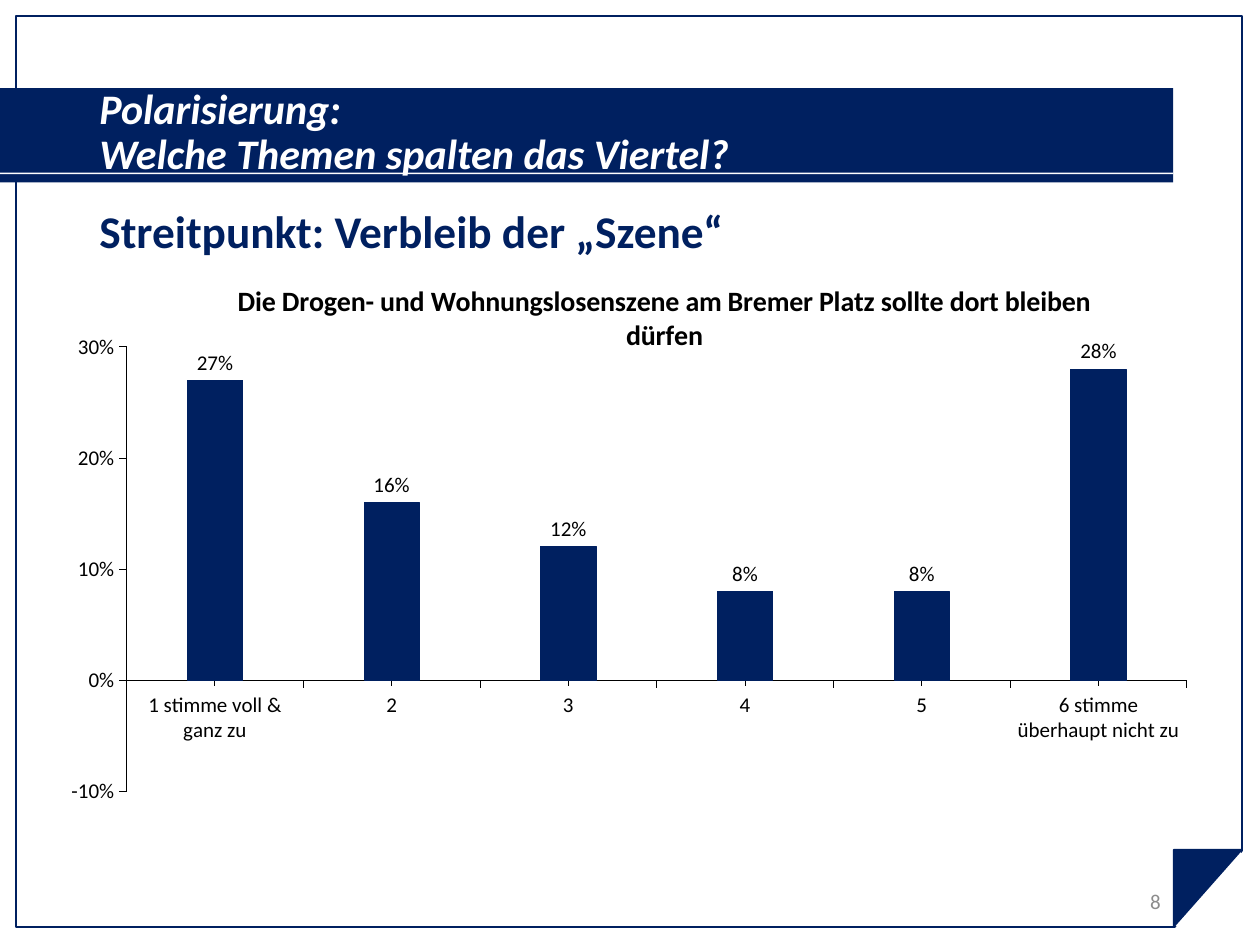
import pptx
import pptx.util
import pptx.chart.data
import pptx.dml.color
import pptx.enum.chart
import pptx.enum.shapes
import pptx.enum.text
import pptx.oxml
import pptx.oxml.ns

Cm, Pt = pptx.util.Cm, pptx.util.Pt
RGB = pptx.dml.color.RGBColor
Kind = pptx.enum.shapes.MSO_SHAPE
Align = pptx.enum.text.PP_ALIGN
Anchor = pptx.enum.text.MSO_ANCHOR
Fit = pptx.enum.text.MSO_AUTO_SIZE
Tick = pptx.enum.chart.XL_TICK_MARK
Place = pptx.enum.chart.XL_LABEL_POSITION

NAVY = RGB(0x00, 0x20, 0x60)
WHITE = RGB(0xFF, 0xFF, 0xFF)
BLACK = RGB(0x00, 0x00, 0x00)
GRAY = RGB(0x8C, 0x8C, 0x8C)

TITLE = dict(size=Pt(24), bold=True, italic=True)
HEAD = dict(size=Pt(25.9), bold=True)
PAGE = dict(size=Pt(12))
LABEL = dict(size=Pt(12), bold=False)
CAPTION = dict(size=Pt(16), bold=True)


def put(obj, vals):
    for name, val in vals.items():
        setattr(obj, name, val)


def node(tag, **vals):
    item = pptx.oxml.parse_xml(f"<{tag} {pptx.oxml.ns.nsdecls(tag.split(':')[0])}/>")
    for name, val in vals.items():
        item.set(name, str(val))
    return item


class Deck:
    face = "Calibri"

    def __init__(self):
        self.prs = pptx.Presentation()
        put(self.prs, dict(slide_width=Cm(25.4), slide_height=Cm(19.05)))
        self.slide = self.prs.slides.add_slide(self.prs.slide_layouts[1])

    def font(self, font, style, color):
        put(font, dict(name=self.face, **style))
        font.color.rgb = color

    def shape(self, kind, area, fill=None, line=None, turn=0):
        shape = self.slide.shapes.add_shape(kind, *map(Cm, area))
        shape.shadow.inherit = False
        shape.rotation = turn
        if fill is None:
            shape.fill.background()
        else:
            shape.fill.solid()
            shape.fill.fore_color.rgb = fill
        if line is None:
            shape.line.fill.background()
        else:
            shape.line.color.rgb = line
            shape.line.width = Pt(1)

    def fill(self, box, area, lines, style, color, anchor, **form):
        put(box, dict(zip(("left", "top", "width", "height"), map(Cm, area))))
        frame = box.text_frame
        put(frame, dict(text="\n".join(lines), word_wrap=True,
                        auto_size=Fit.NONE, vertical_anchor=anchor))
        for para in frame.paragraphs:
            props = para._p.get_or_add_pPr()
            put(para, dict(space_before=Pt(0), **form))
            props.set("marL", "0")
            props.set("indent", "0")
            props.append(node("a:buNone"))
            for run in para.runs:
                self.font(run.font, style, color)

    def hold(self, index, *args, **form):
        """Fill a placeholder and bring it in front of the shapes."""
        box = self.slide.placeholders[index]
        self.fill(box, *args, **form)
        box.element.getparent().append(box.element)

    def text(self, area, *args, **form):
        box = self.slide.shapes.add_textbox(*map(Cm, area))
        self.fill(box, area, *args, **form)

    def axis(self, axis, **vals):
        put(axis, dict(has_major_gridlines=False, **vals))
        self.font(axis.tick_labels.font, LABEL, BLACK)
        axis.format.line.color.rgb = BLACK
        axis.format.line.width = Pt(0.5)

    def place(self, part, **vals):
        """Give a chart part a fixed place, as shares of the chart."""
        for old in part.findall(pptx.oxml.ns.qn("c:layout")):
            part.remove(old)
        spot, hand = node("c:layout"), node("c:manualLayout")
        for name, val in vals.items():
            hand.append(node(f"c:{name}", val=val))
        spot.append(hand)
        text = part.find(pptx.oxml.ns.qn("c:tx"))
        part.insert(0 if text is None else 1, spot)

    def chart(self, area, title, cats, vals):
        data = pptx.chart.data.CategoryChartData(number_format="0%")
        data.categories = cats
        data.add_series("Series 1", vals)
        chart = self.slide.shapes.add_chart(
            pptx.enum.chart.XL_CHART_TYPE.COLUMN_CLUSTERED,
            *map(Cm, area), data).chart
        self.font(chart.font, dict(size=Pt(10)), BLACK)
        chart.has_legend = False
        chart.chart_title.text_frame.text = title
        run = chart.chart_title.text_frame.paragraphs[0].runs[0]
        self.font(run.font, CAPTION, BLACK)
        chart.chart_title.include_in_layout = False

        self.axis(chart.category_axis, major_tick_mark=Tick.OUTSIDE,
                  minor_tick_mark=Tick.OUTSIDE)
        self.axis(chart.value_axis, major_tick_mark=Tick.OUTSIDE,
                  minimum_scale=-0.1, maximum_scale=0.3, major_unit=0.1)
        put(chart.value_axis.tick_labels,
            dict(number_format="0%", number_format_is_linked=False))

        plot = chart.plots[0]
        put(plot, dict(gap_width=219, overlap=-27, vary_by_categories=False,
                       has_data_labels=True))
        put(plot.data_labels, dict(show_value=True, number_format="0%",
                                   number_format_is_linked=False,
                                   position=Place.OUTSIDE_END))
        self.font(plot.data_labels.font, LABEL, BLACK)
        look = plot.series[0].format
        look.fill.solid()
        look.fill.fore_color.rgb = NAVY
        look.line.color.rgb = NAVY
        look.line.width = Pt(0.5)

        self.place(chart.chart_title._element, xMode="edge", yMode="edge",
                   x=0.16, y=0.02)
        self.place(chart._chartSpace.chart.plotArea, layoutTarget="inner",
                   xMode="edge", yMode="edge", x=0.07, y=0.13, w=0.9, h=0.7)


def main():
    deck = Deck()
    deck.shape(Kind.RECTANGLE, (0.33, 0.33, 24.71, 18.36), line=NAVY)
    deck.shape(Kind.RECTANGLE, (0, 1.78, 23.65, 1.9), fill=NAVY)
    deck.shape(Kind.RECTANGLE, (0, 3.48, 23.65, 0.03), fill=WHITE)
    for left, top, color, turn in ((23.62, 17.25, WHITE, 270),
                                   (23.57, 17.22, NAVY, 90)):
        deck.shape(Kind.RIGHT_TRIANGLE, (left, top, 1.55, 1.37),
                   color, color, turn)
    deck.hold(1, (1.75, 4.19, 21.9, 1.14), ["Streitpunkt: Verbleib der „Szene“"],
              HEAD, NAVY, Anchor.TOP, line_spacing=0.8)
    deck.text((17.93, 17.65, 5.72, 1.02), ["8"], PAGE, GRAY, Anchor.MIDDLE,
              alignment=Align.RIGHT)
    deck.hold(0, (1.75, 1.85, 22.96, 1.68),
              ["Polarisierung:", "Welche Themen spalten das Viertel?"],
              TITLE, WHITE, Anchor.MIDDLE, line_spacing=0.9,
              alignment=Align.LEFT)
    deck.chart((0.89, 5.33, 23.75, 12.8),
               "Die Drogen- und Wohnungslosenszene am Bremer Platz "
               "sollte dort bleiben dürfen",
               ["1 stimme voll & ganz zu", "2", "3", "4", "5",
                "6 stimme überhaupt nicht zu"],
               [0.27, 0.16, 0.12, 0.08, 0.08, 0.28])
    deck.prs.save("out.pptx")


if __name__ == "__main__":
    main()
